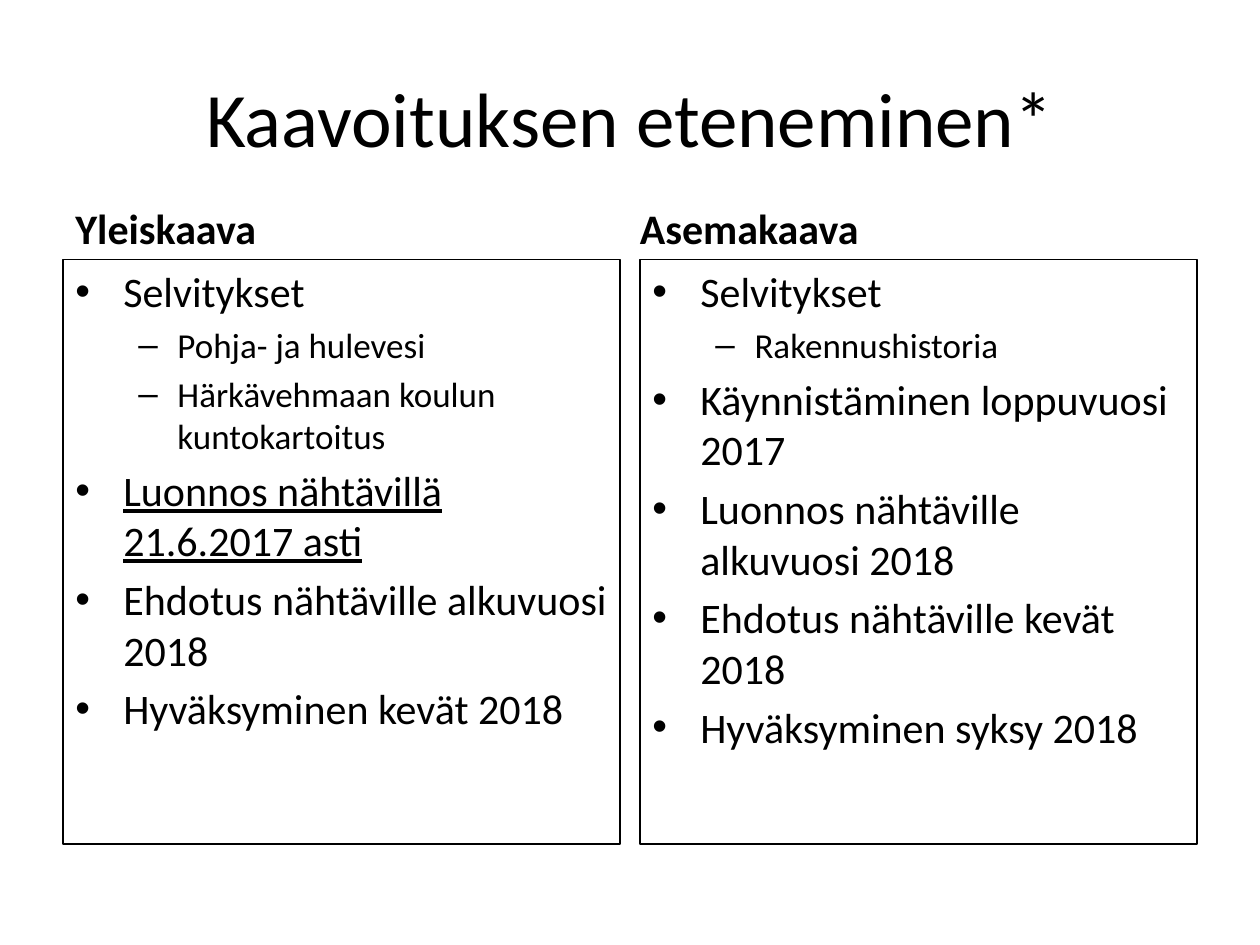
from dataclasses import dataclass

from lxml import etree
from pptx import Presentation
from pptx.dml.color import RGBColor
from pptx.enum.shapes import MSO_SHAPE
from pptx.enum.text import MSO_ANCHOR, PP_ALIGN
from pptx.oxml.ns import qn
from pptx.util import Inches, Pt

RECT = MSO_SHAPE.RECTANGLE
TOP, MIDDLE, BOTTOM = MSO_ANCHOR.TOP, MSO_ANCHOR.MIDDLE, MSO_ANCHOR.BOTTOM
LEFT, CENTER = PP_ALIGN.LEFT, PP_ALIGN.CENTER


@dataclass(frozen=True)
class Theme:
    font: str = "Calibri"
    ink: RGBColor = RGBColor(0, 0, 0)
    title: int = 44
    heading: int = 24
    levels: tuple = (24, 20)
    bullets: tuple = ("•", "–")
    margins: tuple = (0.38, 0.81)
    hangs: tuple = (0.38, 0.31)
    spacing: float = 0.2
    line: float = 0.75


# Grid in inches: two columns inside equal side margins
WIDTH, HEIGHT = 10, 7.5
MARGIN, COL_W = 0.5, 4.42
COL_X = (MARGIN, WIDTH - MARGIN - COL_W)
HEAD_Y, HEAD_H = 1.36, 0.7
LIST_Y, LIST_H = HEAD_Y + HEAD_H, 4.64


class Deck:
    def __init__(self, theme):
        self.theme = theme
        self.prs = Presentation()
        self.prs.slide_width, self.prs.slide_height = Inches(WIDTH), Inches(HEIGHT)
        self.s = self.prs.slides.add_slide(self.prs.slide_layouts[5])

    def style(self, p, size, bold=False, underline=False, align=LEFT):
        p.alignment = align
        for r in p.runs:
            f = r.font
            f.name, f.size, f.bold = self.theme.font, Pt(size), bold
            f.underline = underline
            f.color.rgb = self.theme.ink

    def title(self, text):
        sp = self.s.shapes.title
        sp.left, sp.top = Inches(MARGIN), Inches(0.3)
        sp.width, sp.height = Inches(WIDTH - 2 * MARGIN), Inches(1.25)
        tf = sp.text_frame
        tf.text = text
        tf.vertical_anchor = MIDDLE
        self.style(tf.paragraphs[0], self.theme.title, align=CENTER)

    def heading(self, x, text):
        sp = self.s.shapes.add_textbox(
            Inches(x), Inches(HEAD_Y), Inches(COL_W), Inches(HEAD_H))
        tf = sp.text_frame
        tf.word_wrap = True
        tf.vertical_anchor = BOTTOM
        tf.text = text
        self.style(tf.paragraphs[0], self.theme.heading, bold=True)

    def bullet(self, p, level):
        t = self.theme
        p.level = level
        pPr = p._p.get_or_add_pPr()
        pPr.set("marL", str(Inches(t.margins[level])))
        pPr.set("indent", str(-Inches(t.hangs[level])))
        etree.SubElement(pPr, qn("a:buFont")).set("typeface", "Arial")
        etree.SubElement(pPr, qn("a:buChar")).set("char", t.bullets[level])

    def bullet_box(self, x, items):
        t = self.theme
        sp = self.s.shapes.add_shape(
            RECT, Inches(x), Inches(LIST_Y), Inches(COL_W), Inches(LIST_H))
        sp.shadow.inherit = False
        sp.fill.background()
        sp.line.color.rgb, sp.line.width = t.ink, Pt(t.line)
        tf = sp.text_frame
        tf.word_wrap = True
        tf.vertical_anchor = TOP
        for i, (level, text, underline) in enumerate(items):
            p = tf.add_paragraph() if i else tf.paragraphs[0]
            p.text = text
            size = t.levels[level]
            self.bullet(p, level)
            p.space_before = Pt(t.spacing * size if i else 0)
            self.style(p, size, underline=underline)


# Each item: level, text, underlined
COLUMNS = (
    ("Yleiskaava", COL_X[0], (
        (0, "Selvitykset", False),
        (1, "Pohja- ja hulevesi", False),
        (1, "Härkävehmaan koulun kuntokartoitus", False),
        (0, "Luonnos nähtävillä 21.6.2017 asti", True),
        (0, "Ehdotus nähtäville alkuvuosi 2018", False),
        (0, "Hyväksyminen kevät 2018", False),
    )),
    ("Asemakaava", COL_X[1] - 0.1, (
        (0, "Selvitykset", False),
        (1, "Rakennushistoria", False),
        (0, "Käynnistäminen loppuvuosi 2017", False),
        (0, "Luonnos nähtäville alkuvuosi 2018", False),
        (0, "Ehdotus nähtäville kevät 2018", False),
        (0, "Hyväksyminen syksy 2018", False),
    )),
)


def main():
    deck = Deck(Theme())
    deck.title("Kaavoituksen eteneminen*")
    # Plan columns: heading above a framed list
    for x, (name, heading_x, items) in zip(COL_X, COLUMNS):
        deck.heading(heading_x, name)
        deck.bullet_box(x, items)
    deck.prs.save("out.pptx")


if __name__ == "__main__":
    main()
